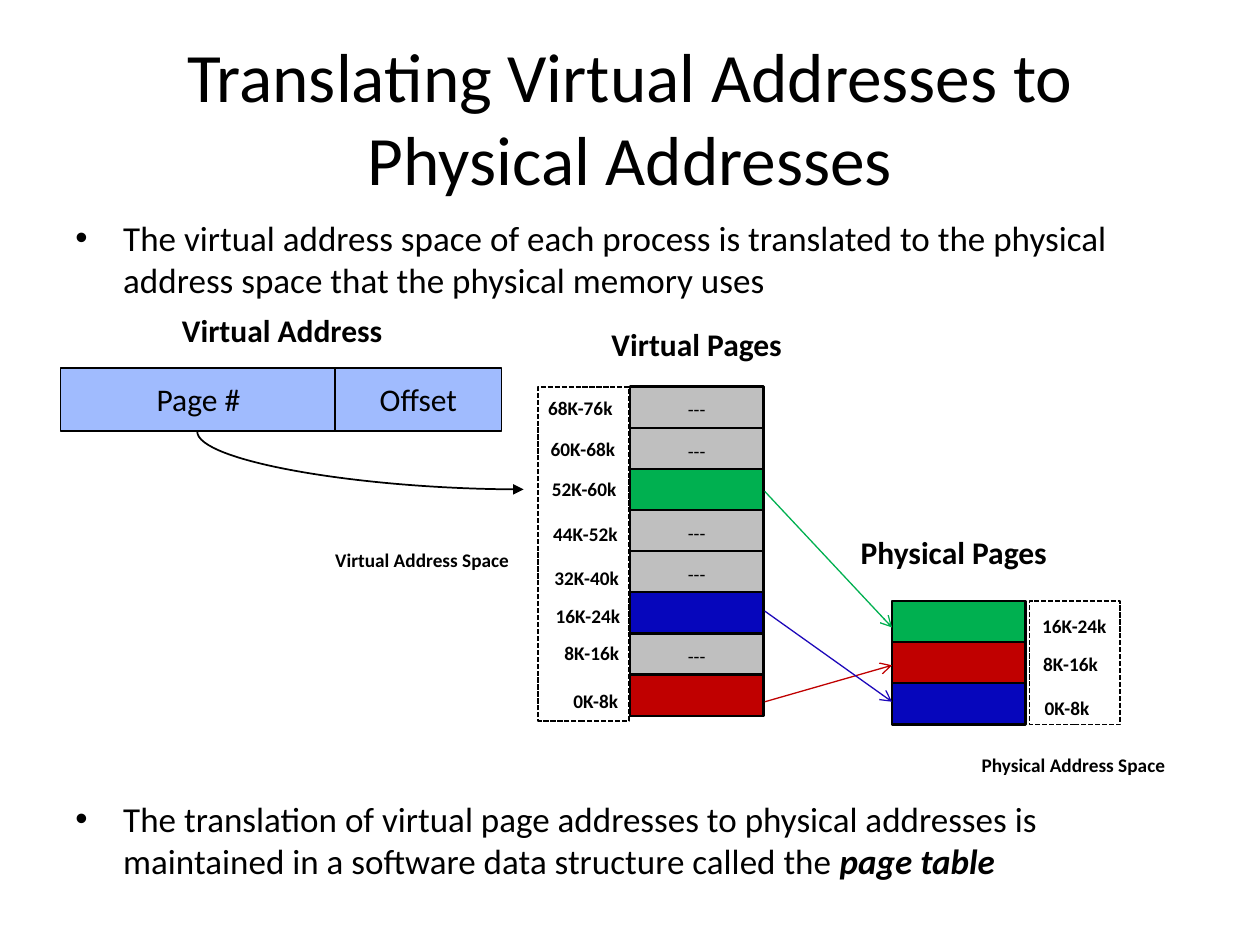
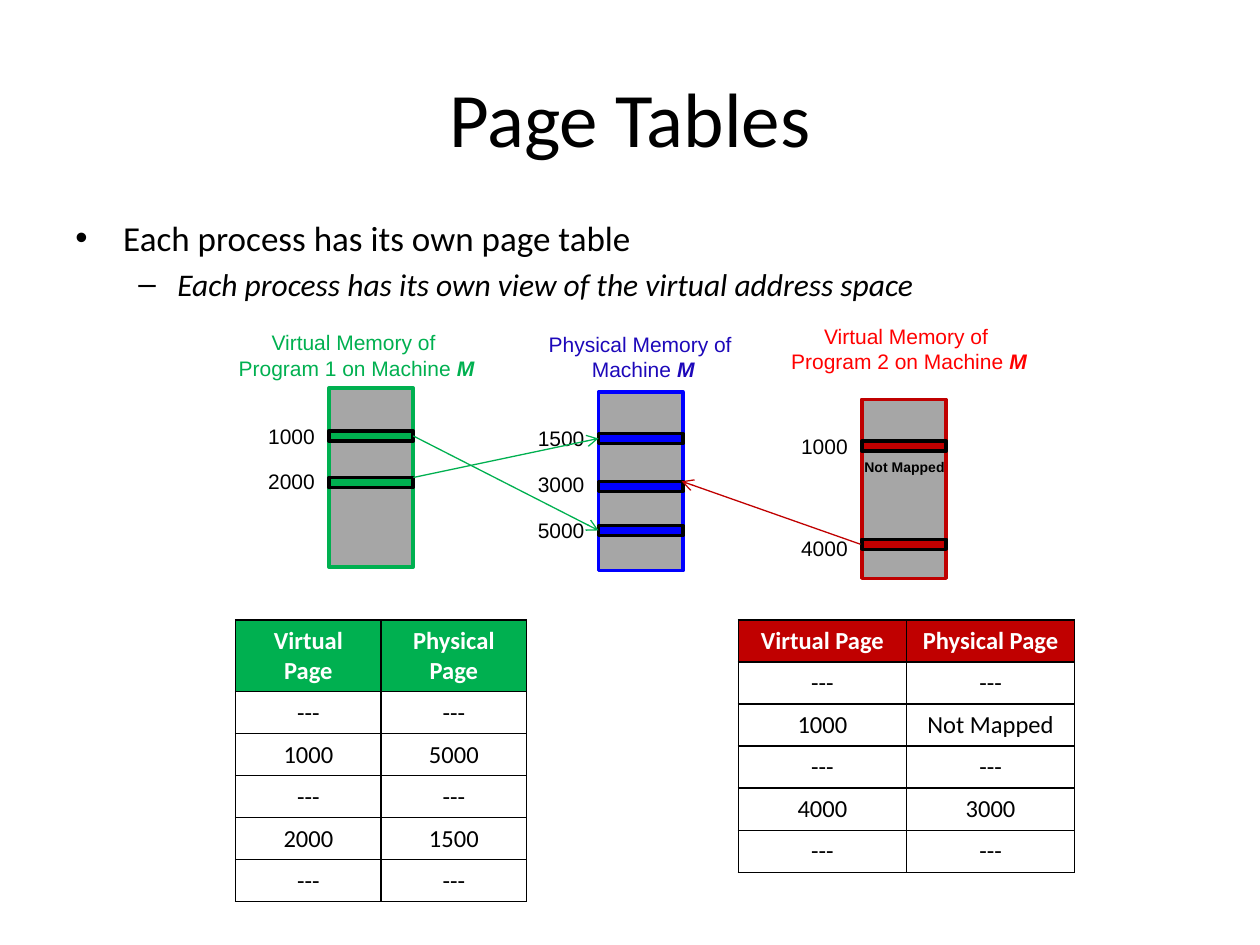
"""Build two slides on virtual address translation and page tables."""
from lxml import etree
from pptx import Presentation
from pptx.dml.color import RGBColor
from pptx.enum import dml, shapes, text
from pptx.oxml.ns import qn
from pptx.util import Inches, Pt

BLACK = RGBColor(0x00, 0x00, 0x00)
WHITE = RGBColor(0xFF, 0xFF, 0xFF)
GREEN = RGBColor(0x00, 0xB0, 0x50)
RED = RGBColor(0xC0, 0x00, 0x00)
BRIGHT_RED = RGBColor(0xFF, 0x00, 0x00)
NAVY = RGBColor(0x06, 0x06, 0xBC)
INDIGO = RGBColor(0x1D, 0x08, 0xBA)
BLUE = RGBColor(0x00, 0x00, 0xFF)
PALE_BLUE = RGBColor(0xA0, 0xBB, 0xFE)
LIGHT_GREY = RGBColor(0xBF, 0xBF, 0xBF)
GREY = RGBColor(0xA6, 0xA6, 0xA6)

BOLD_ITALIC = {"bold": True, "italic": True}
LABEL = {"size": Pt(11), "bold": True}
HEADING = {"size": Pt(18), "bold": True}
ARIAL = {"name": "Arial", "size": Pt(12)}
CENTER = {"alignment": text.PP_ALIGN.CENTER}
SPACED = {"line_spacing": 1.15, "space_after": Pt(10)}
NO_INSET = (0, 0, 0, 0)

BULLET_LEVELS = [("•", 0.38, 0.38, 20, {}), ("–", 0.81, 0.31, 18, {"italic": True})]
TRANSLATION_BULLETS = [
    (0, 0, [("The virtual address space of each process is translated to the "
             "physical address space that the physical memory uses", {})]),
    (0, 284, [("The translation of virtual page addresses to physical addresses is "
               "maintained in a software data structure called the ", {}),
              ("page table", BOLD_ITALIC)]),
]
TABLE_BULLETS = [
    (0, 4, [("Each process has its own page table", {})]),
    (1, 3.6, [("Each process has its own view of the virtual address space", {})]),
]

PAGE_HEIGHT, PAGE_WIDTH = 0.33, 1.06
PAGE_STACKS = [
    (5, 3.07, [
        (LIGHT_GREY, "68K-76k", 4.35, 3.12), (LIGHT_GREY, "60K-68k", 4.37, 3.44),
        (GREEN, "52K-60k", 4.38, 3.76), (LIGHT_GREY, "44K-52k", 4.39, 4.12),
        (LIGHT_GREY, "32K-40k", 4.4, 4.47), (NAVY, "16K-24k", 4.41, 4.77),
        (LIGHT_GREY, "8K-16k", 4.48, 5.06), (RED, "0K-8k", 4.55, 5.44)]),
    (7.08, 4.77, [
        (GREEN, "16K-24k", 8.27, 4.85), (RED, "8K-16k", 8.28, 5.15),
        (NAVY, "0K-8k", 8.29, 5.5)]),
]
LABEL_WIDTHS = {5: 0.4, 6: 0.47, 7: 0.55}
SPACE_FRAMES = [(4.27, 3.07, 0.72, 2.65), (8.17, 4.77, 0.72, 0.98)]
SPACE_NAMES = [("Physical Address Space", 7.79, 5.95), ("Virtual Address Space", 2.66, 4.32)]
PAGE_MAPPINGS = [(5.57, 5.28, RED), (3.9, 4.98, GREEN), (4.85, 5.57, INDIGO)]
ADDRESS_FIELDS = [("Page #", 0.48, 2.19), ("Offset", 2.66, 1.32)]
DIAGRAM_HEADINGS = [("Virtual Pages", 4.28, 2.53), ("Virtual Address", 0.99, 2.42),
                    ("Physical Pages", 6.32, 4.18)]

MEMORIES = [
    {"left": 2.61, "top": 3.08, "color": GREEN, "caption_color": GREEN,
     "caption": ("Virtual Memory of ", "Program 1 on Machine "),
     "caption_box": (1.75, 2.57, 2.16, 0.5),
     "slots": [("1000", 3.42, 3.31), ("2000", 3.79, 3.67)]},
    {"left": 4.75, "top": 3.11, "color": BLUE, "caption_color": INDIGO,
     "caption": ("Physical Memory of ", "Machine "),
     "caption_box": (4.25, 2.58, 1.71, 0.5),
     "slots": [("1500", 3.44, 3.33), ("3000", 3.82, 3.69), ("5000", 4.17, 4.06)]},
    {"left": 6.84, "top": 3.17, "color": RED, "caption_color": BRIGHT_RED,
     "caption": ("Virtual Memory of ", "Program 2 on Machine "),
     "caption_box": (6.1, 2.52, 2.23, 0.5),
     "slots": [("1000", 3.5, 3.39), ("4000", 4.28, 4.2)]},
]
MEMORY_WIDTH, MEMORY_HEIGHT, SLOT_HEIGHT = 0.67, 1.42, 0.08
MEMORY_MAPPINGS = [(3.28, 3.79, 4.75, 3.48, GREEN), (3.28, 3.46, 4.75, 4.21, GREEN),
                   (6.83, 4.32, 5.41, 3.82, RED)]

TABLE_HEADER = ("Virtual Page", "Physical Page")
EMPTY_ROW = ("---", "---")
PAGE_TABLES = [
    (1.87, 2.31, GREEN, [("1000", "5000"), ("2000", "1500")]),
    (5.86, 2.67, RED, [("1000", "Not Mapped"), ("4000", "3000")]),
]


def apply(target, values):
    """Set each attribute of target from a dict."""
    for name, value in values.items():
        setattr(target, name, value)


def add_spans(para, spans, base):
    """Add formatted runs to a paragraph."""
    for words, extra in spans:
        span = para.add_run()
        span.text = words
        style = {"name": "Calibri", "color": BLACK, **base, **extra}
        span.font.color.rgb = style.pop("color")
        apply(span.font, style)


def write(frame, lines, font, layout=None, insets=(0.1, 0.05, 0.1, 0.05), wrap=False):
    """Fill a text frame with lines, each a string or a list of spans."""
    frame.word_wrap = wrap
    sides = ("margin_left", "margin_top", "margin_right", "margin_bottom")
    apply(frame, dict(zip(sides, map(Inches, insets))))
    for index, line in enumerate(lines):
        para = frame.add_paragraph() if index else frame.paragraphs[0]
        apply(para, layout or {})
        add_spans(para, [(line, {})] if isinstance(line, str) else line, font)


def add_text(page, box, lines, font, layout=None, **options):
    """Add a text box."""
    frame = page.shapes.add_textbox(*map(Inches, box)).text_frame
    write(frame, lines, font, layout, **options)


def add_rect(page, box, fill, line=BLACK, width=1.0):
    """Add a rectangle, hollow and dashed when it has no fill."""
    rect = page.shapes.add_shape(shapes.MSO_SHAPE.RECTANGLE, *map(Inches, box))
    rect.shadow.inherit = False
    rect.line.color.rgb = line
    rect.line.width = Pt(width)
    if fill is None:
        rect.fill.background()
        rect.line.dash_style = dml.MSO_LINE.SQUARE_DOT
    else:
        rect.fill.solid()
        rect.fill.fore_color.rgb = fill
    return rect


def add_arrow(page, ends, color, width=0.75, head="arrow", kind=shapes.MSO_CONNECTOR.STRAIGHT):
    """Add a connector with an arrowhead at its end."""
    arrow = page.shapes.add_connector(kind, *map(Inches, ends))
    arrow.line.color.rgb = color
    arrow.line.width = Pt(width)
    properties = arrow.element.spPr
    etree.SubElement(properties.find(qn("a:ln")), qn("a:tailEnd"), type=head)
    etree.SubElement(properties, qn("a:effectLst"))
    return arrow


def add_page(deck, title, size, bullets):
    """Add a titled slide with its bullets."""
    page = deck.slides.add_slide(deck.slide_layouts[5])
    holder = page.shapes.title
    box = map(Inches, (0.5, 0.3, 9, 1.25))
    apply(holder, dict(zip(("left", "top", "width", "height"), box)))
    write(holder.text_frame, [title], {"size": Pt(size)}, CENTER, wrap=True)
    apply(holder.text_frame, {"auto_size": text.MSO_AUTO_SIZE.NONE,
                              "vertical_anchor": text.MSO_ANCHOR.MIDDLE})
    frame = page.shapes.add_textbox(*map(Inches, (0.5, 1.67, 9, 5.58))).text_frame
    frame.word_wrap = True
    for index, (level, gap, spans) in enumerate(bullets):
        mark, margin, hang, points, style = BULLET_LEVELS[level]
        para = frame.add_paragraph() if index else frame.paragraphs[0]
        apply(para, {"level": level, "space_before": Pt(gap)})
        properties = para._p.get_or_add_pPr()
        properties.set("marL", str(Inches(margin)))
        properties.set("indent", str(-Inches(hang)))
        etree.SubElement(properties, qn("a:buFont"), typeface="Arial")
        etree.SubElement(properties, qn("a:buChar"), char=mark)
        add_spans(para, spans, {"size": Pt(points), **style})
    return page


def build_translation(deck):
    """Draw virtual pages mapped to physical pages."""
    page = add_page(deck, "Translating Virtual Addresses to Physical Addresses", 39.6,
                    TRANSLATION_BULLETS)
    for left, top, entries in PAGE_STACKS:
        for index, (color, label, label_left, label_top) in enumerate(entries):
            box = (left, top + index * 0.326, PAGE_WIDTH, PAGE_HEIGHT)
            rect = add_rect(page, box, color, width=1.5)
            if color == LIGHT_GREY:
                write(rect.text_frame, ["---"], {"size": Pt(11)}, {**CENTER, **SPACED}, wrap=True)
            add_text(page, (label_left, label_top, LABEL_WIDTHS[len(label)], 0.22),
                     [label], LABEL, SPACED, insets=NO_INSET, wrap=True)
    for name, left, top in SPACE_NAMES:
        add_text(page, (left, top, 1.49, 0.22), [name], LABEL, SPACED, insets=NO_INSET)
    for start, end, color in PAGE_MAPPINGS:
        add_arrow(page, (6.07, start, 7.08, end), color)
    for name, left, width in ADDRESS_FIELDS:
        field = add_rect(page, (left, 2.92, width, 0.5), PALE_BLUE)
        write(field.text_frame, [name], {"size": Pt(18)}, CENTER)
    curve = add_arrow(page, (3.09, 2.36, 2.63, 4.95), BLACK, 1, "triangle",
                      shapes.MSO_CONNECTOR.CURVE)
    curve.element.spPr.find(qn("a:xfrm")).set("rot", str(270 * 60000))
    curve.element.spPr.find(qn("a:prstGeom")).set("prst", "curvedConnector2")
    for name, left, top in DIAGRAM_HEADINGS:
        add_text(page, (left, top, 2.5, 0.4), [name], HEADING, CENTER, wrap=True)
    for box in SPACE_FRAMES:
        add_rect(page, box, None)


def add_page_table(page, left, width, color, mappings):
    """Add one program's page table."""
    rows = [TABLE_HEADER, EMPTY_ROW]
    for mapping in mappings:
        rows += [mapping, EMPTY_ROW]
    box = (left, 4.92, width, 0.26 * len(rows))
    table = page.shapes.add_table(len(rows), 2, *map(Inches, box)).table
    apply(table, {"first_row": False, "horz_banding": False})
    for row_index, row in enumerate(rows):
        for column_index, words in enumerate(row):
            cell = table.cell(row_index, column_index)
            properties = cell._tc.get_or_add_tcPr()
            for side in ("lnL", "lnR", "lnT", "lnB"):
                border = etree.SubElement(properties, qn(f"a:{side}"), w=str(Pt(1)))
                fill = etree.SubElement(border, qn("a:solidFill"))
                etree.SubElement(fill, qn("a:srgbClr"), val=str(BLACK))
            header = row_index == 0
            if header:
                cell.fill.solid()
                cell.fill.fore_color.rgb = color
            else:
                cell.fill.background()
            para = cell.text_frame.paragraphs[0]
            apply(para, CENTER)
            add_spans(para, [(words, {})], {"size": Pt(14), "bold": header,
                                            "color": WHITE if header else BLACK})


def build_page_tables(deck):
    """Draw two programs sharing physical memory, with their page tables."""
    page = add_page(deck, "Page Tables", 44, TABLE_BULLETS)
    for memory in MEMORIES:
        left, color = memory["left"], memory["color"]
        add_rect(page, (left, memory["top"], MEMORY_WIDTH, MEMORY_HEIGHT), GREY, color, 2)
        for address, top, label_top in memory["slots"]:
            add_rect(page, (left, top, MEMORY_WIDTH, SLOT_HEIGHT), color, width=2)
            add_text(page, (left - 0.58, label_top, 0.57, 0.29), [address], ARIAL)
        first, second = memory["caption"]
        add_text(page, memory["caption_box"], [first, [(second, {}), ("M", BOLD_ITALIC)]],
                 {**ARIAL, "color": memory["caption_color"]}, CENTER, wrap=True)
    for *ends, color in MEMORY_MAPPINGS:
        add_arrow(page, ends, color)
    add_text(page, (6.86, 3.59, 0.67, 0.25), ["Not Mapped"],
             {"name": "Arial", "size": Pt(8), "bold": True}, insets=(0, 0.05, 0, 0.05))
    for entry in PAGE_TABLES:
        add_page_table(page, *entry)


def main():
    """Build and save the deck."""
    deck = Presentation()
    apply(deck, {"slide_width": Inches(10), "slide_height": Inches(7.5)})
    build_translation(deck)
    build_page_tables(deck)
    deck.save("out.pptx")


if __name__ == "__main__":
    main()
